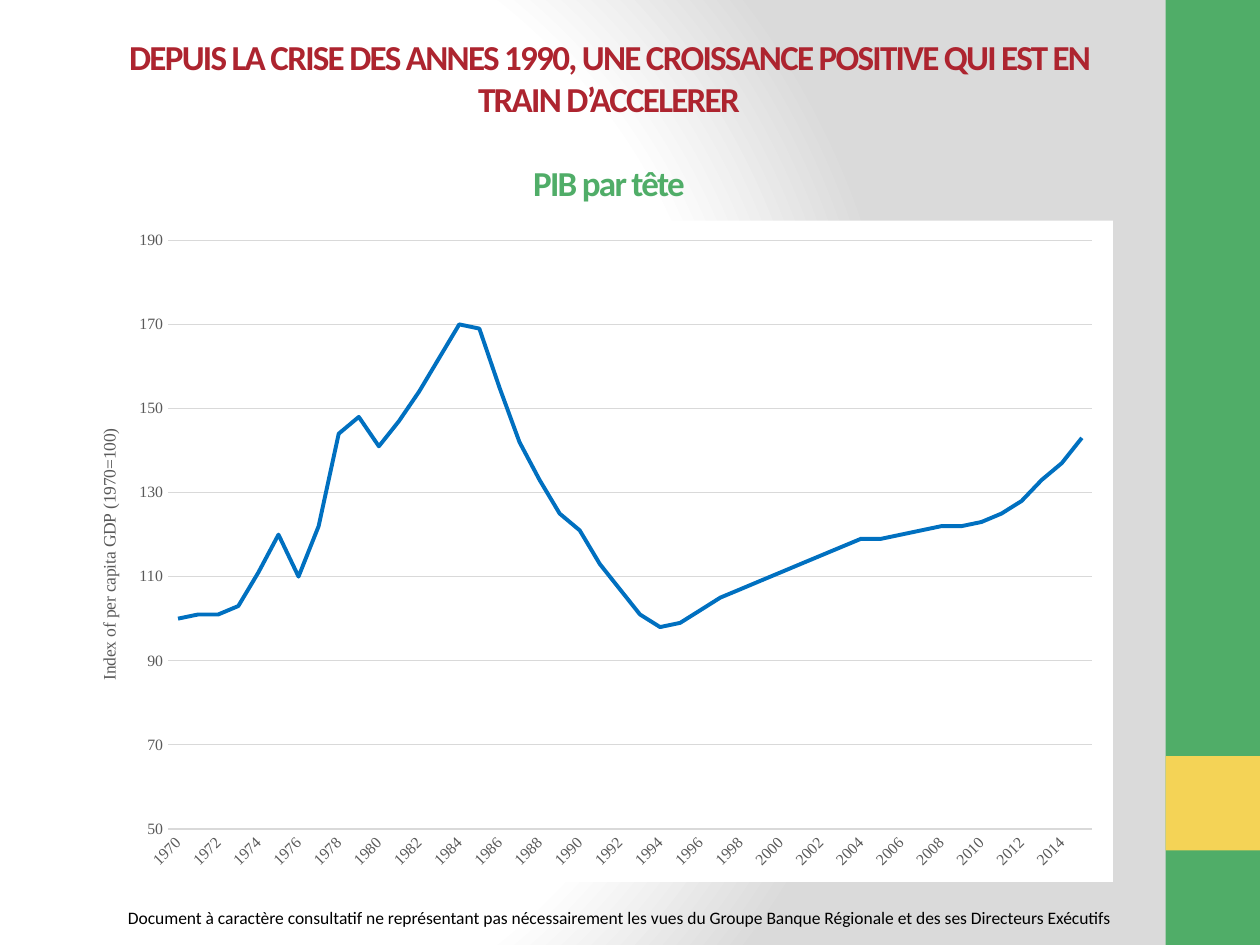
from lxml import etree
from pptx import Presentation
from pptx.chart.data import CategoryChartData
from pptx.dml.color import RGBColor
from pptx.enum import chart as ch, shapes, text
from pptx.oxml import parse_xml
from pptx.oxml.ns import nsdecls, qn
from pptx.util import Pt

COLORS = {
    "white": "FFFFFF", "backdrop": "DADADA", "green": "50AD68",
    "yellow": "F4D356", "red": "AD242F", "black": "000000",
    "label": "595959", "grid": "D9D9D9", "line": "0070C0",
}
FIRST_YEAR = 1970
GDP_INDEX = [
    100, 101, 101, 103, 111, 120, 110, 122, 144, 148,
    141, 147, 154, 162, 170, 169, 155, 142, 133, 125,
    121, 113, 107, 101, 98, 99, 102, 105, 107, 109,
    111, 113, 115, 117, 119, 119, 120, 121, 122, 122,
    123, 125, 128, 133, 137, 143,
]


def rgb(name):
    return RGBColor.from_string(COLORS[name])


def style_font(font, name, size, color, bold=False):
    font.name, font.size, font.bold = name, Pt(size), bold
    font.color.rgb = rgb(color)


def set_background(s):
    """Radial gradient, white at the left and grey at the right."""
    stops = "".join(
        f'<a:gs pos="{pos * 1000}"><a:srgbClr val="{COLORS[c]}"/></a:gs>'
        for pos, c in [(0, "white"), (75, "white"), (100, "backdrop")])
    s.background.fill.solid()
    bg_pr = s.element.cSld.find(qn("p:bg")).find(qn("p:bgPr"))
    bg_pr.replace(bg_pr[0], parse_xml(
        f'<a:gradFill {nsdecls("a")} rotWithShape="1"><a:gsLst>{stops}</a:gsLst>'
        '<a:path path="circle"><a:fillToRect l="20000" t="50000" r="100000"'
        ' b="50000"/></a:path></a:gradFill>'))


def add_side_band(s, left, top, width, height):
    """Green band with a yellow square one side above its foot."""
    square_top = top + height - 2 * width
    for y, h, color in [(top, height, "green"), (square_top, width, "yellow")]:
        sp = s.shapes.add_shape(shapes.MSO_SHAPE.RECTANGLE,
                                Pt(left), Pt(y), Pt(width), Pt(h))
        sp.shadow.inherit = False
        sp.fill.solid()
        sp.fill.fore_color.rgb = rgb(color)
        sp.line.fill.background()


def fill_title(s, left, top, width, height):
    sp = s.shapes.title
    sp.left, sp.top, sp.width, sp.height = map(Pt, (left, top, width, height))
    tf = sp.text_frame
    tf.text = ("DEPUIS LA CRISE DES ANNES 1990, UNE CROISSANCE POSITIVE QUI EST EN "
               "TRAIN D’ACCELERER\nPIB par tête")
    tf.word_wrap, tf.auto_size = True, text.MSO_AUTO_SIZE.NONE
    tf.vertical_anchor, tf.margin_top = text.MSO_ANCHOR.TOP, Pt(8.5)
    for p, color, gap in zip(tf.paragraphs, ("red", "green"), (0, 24)):
        p.alignment, p.space_before, p.line_spacing = text.PP_ALIGN.CENTER, Pt(gap), 1.0
        r = p.runs[0]
        style_font(r.font, "Calibri", 20, color, bold=True)
        r._r.get_or_add_rPr().set("spc", "-100")


def set_layout(parent, index, inner=False, **fractions):
    """Place a chart part by fractions of the chart's size."""
    for old in parent.findall(qn("c:layout")):
        parent.remove(old)
    target = '<c:layoutTarget val="inner"/>' if inner else ""
    modes = '<c:xMode val="edge"/><c:yMode val="edge"/>'
    values = "".join(f'<c:{k} val="{v}"/>' for k, v in fractions.items())
    parent.insert(index, parse_xml(
        f'<c:layout {nsdecls("c")}><c:manualLayout>{target}{modes}{values}'
        '</c:manualLayout></c:layout>'))


def format_axes(chart):
    cat, val = chart.category_axis, chart.value_axis
    for axis in (cat, val):
        axis.major_tick_mark = axis.minor_tick_mark = ch.XL_TICK_MARK.NONE
        style_font(axis.tick_labels.font, "Times New Roman", 9, "label")
    val.minimum_scale, val.maximum_scale, val.major_unit = 50, 190, 20
    val.has_major_gridlines = True
    val.format.line.fill.background()
    for line in (cat.format.line, val.major_gridlines.format.line):
        line.color.rgb, line.width = rgb("grid"), Pt(0.75)

    cat_ax = cat._element
    cat_ax.find(qn("c:txPr")).find(qn("a:bodyPr")).set("rot", "-2700000")
    skip = etree.Element(qn("c:tickLblSkip"), val="2")
    cat_ax.find(qn("c:noMultiLvlLbl")).addprevious(skip)

    tf = val.axis_title.text_frame
    tf.text = "Index of per capita GDP (1970=100)"
    style_font(tf.paragraphs[0].runs[0].font, "Times New Roman", 10, "label")
    set_layout(val.axis_title._element, 1, x=0.03, y=0.31)


def add_gdp_chart(s, left, top, width, height):
    data = CategoryChartData()
    data.categories = [str(FIRST_YEAR + i) for i in range(len(GDP_INDEX))]
    data.add_series("Series 1", GDP_INDEX)
    chart = s.shapes.add_chart(ch.XL_CHART_TYPE.LINE, Pt(left), Pt(top),
                               Pt(width), Pt(height), data).chart
    chart.has_legend = chart.has_title = False
    style_font(chart.font, "Times New Roman", 10, "black")
    plot = chart.plots[0]
    plot.vary_by_categories = False
    series = plot.series[0]
    series.smooth = False
    series.marker.style = ch.XL_MARKER_STYLE.NONE
    series.format.line.color.rgb, series.format.line.width = rgb("line"), Pt(2.25)
    format_axes(chart)

    chart_el = chart._chartSpace.find(qn("c:chart"))
    set_layout(chart_el.find(qn("c:plotArea")), 0, inner=True,
               x=0.1, y=0.03, w=0.88, h=0.89)
    chart_el.addnext(parse_xml(
        f'<c:spPr {nsdecls("c", "a")}><a:solidFill><a:srgbClr val="{COLORS["white"]}"/>'
        '</a:solidFill><a:ln><a:noFill/></a:ln></c:spPr>'))


def add_disclaimer(s, left, top, width, height):
    tf = s.shapes.add_textbox(Pt(left), Pt(top), Pt(width), Pt(height)).text_frame
    tf.word_wrap = True
    tf.text = ("Document à caractère consultatif ne représentant pas nécessairement "
               "les vues du Groupe Banque Régionale et des ses Directeurs Exécutifs")
    style_font(tf.paragraphs[0].runs[0].font, "Calibri", 10, "black")


def main():
    prs = Presentation()
    prs.slide_width, prs.slide_height = Pt(720), Pt(540)
    s = prs.slides.add_slide(prs.slide_layouts[5])
    set_background(s)
    add_side_band(s, 666, 0, 54, 540)
    add_disclaimer(s, 66, 515, 636, 19.5)
    add_gdp_chart(s, 36, 126, 600, 378)
    fill_title(s, 48, 12, 600, 90)
    prs.save("out.pptx")


if __name__ == "__main__":
    main()
